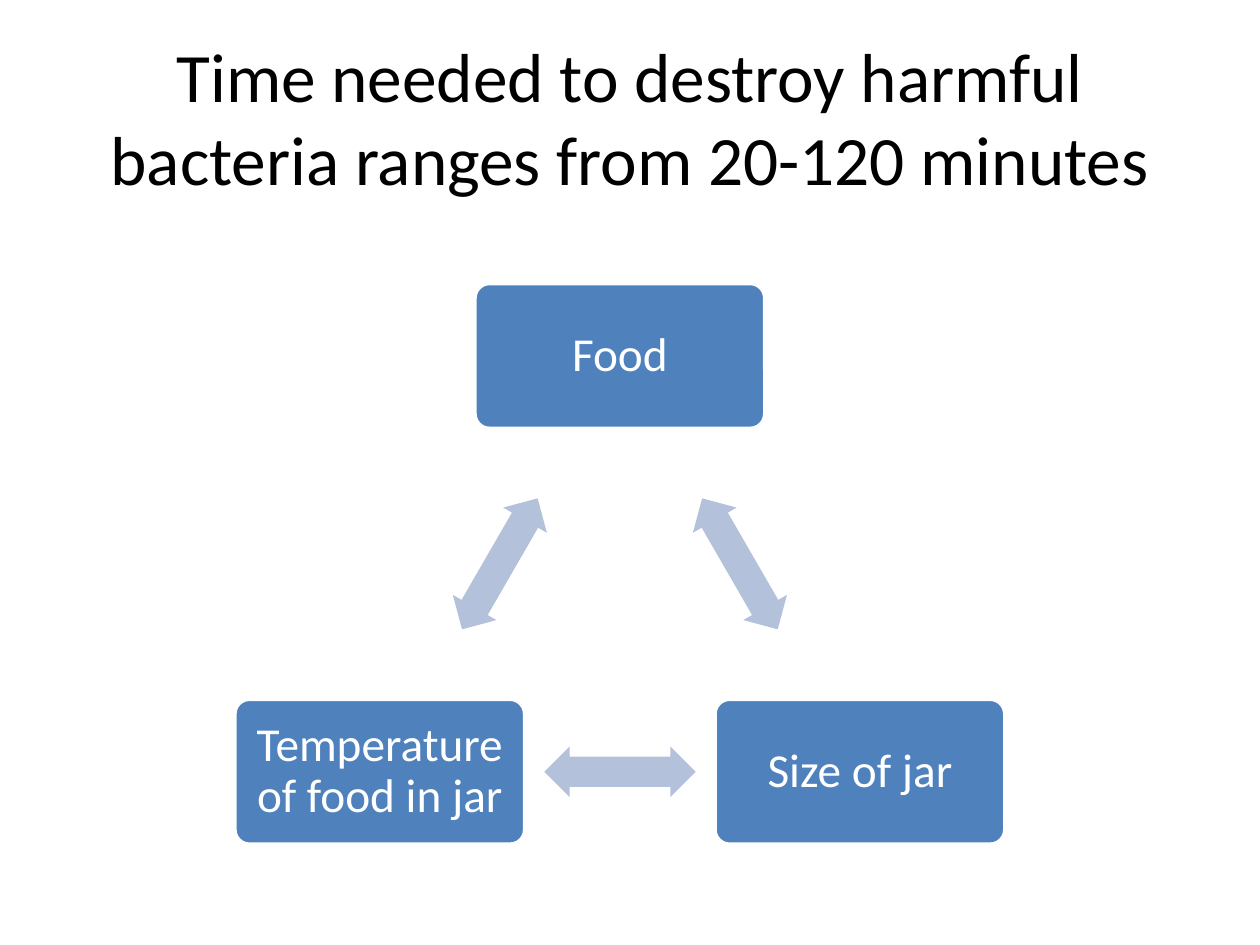
import math

from pptx import Presentation
from pptx import util as u
from pptx.dml.color import RGBColor
from pptx.enum import shapes, text

BLACK = RGBColor(0x00, 0x00, 0x00)
WHITE = RGBColor(0xFF, 0xFF, 0xFF)
BLUE = RGBColor(0x4F, 0x81, 0xBD)
PALE_BLUE = RGBColor(0xB3, 0xC1, 0xDB)
FACTORS = ["Food", "Size of jar", "Temperature of food in jar"]


def write_text(shape, words, size, color, inset=0.1, line_spacing=1.0):
    """Put centred, wrapped text in a shape with the given format."""
    frame = shape.text_frame
    frame.word_wrap = True
    frame.auto_size = text.MSO_AUTO_SIZE.NONE
    frame.vertical_anchor = text.MSO_ANCHOR.MIDDLE
    frame.margin_left = frame.margin_right = u.Inches(inset)
    frame.margin_top = frame.margin_bottom = u.Inches(inset)
    paragraph = frame.paragraphs[0]
    paragraph.alignment = text.PP_ALIGN.CENTER
    paragraph.line_spacing = line_spacing
    run = paragraph.add_run()
    run.text = words
    run.font.name = "Calibri"
    run.font.size = u.Pt(size)
    run.font.color.rgb = color


def add_centred_shape(slide, kind, center, size, fill, adjustments):
    """Add a filled preset shape around a centre point."""
    (x, y), (width, height) = center, size
    shape = slide.shapes.add_shape(
        kind, u.Inches(x - width / 2), u.Inches(y - height / 2),
        u.Inches(width), u.Inches(height))
    shape.shadow.inherit = False
    shape.fill.solid()
    shape.fill.fore_color.rgb = fill
    shape.line.fill.background()
    for index, value in enumerate(adjustments):
        shape.adjustments[index] = value
    return shape


def add_title(slide, left, top, width, height, words):
    """Place and format the title placeholder."""
    title = slide.shapes.title
    title.left, title.top = u.Inches(left), u.Inches(top)
    title.width, title.height = u.Inches(width), u.Inches(height)
    write_text(title, words, size=39.6, color=BLACK)


def add_cycle(slide, left, top, width, labels):
    """Draw labelled boxes on a ring with double arrows between neighbours."""
    box_size, arrow_size, radius = (2.3, 1.15), (1.2, 0.4), 2.2
    middle_x = left + width / 2
    middle_y = top + box_size[1] / 2 + radius
    step = 360 / len(labels)
    angles = [math.radians(index * step) for index in range(len(labels))]
    centers = [(middle_x + radius * math.sin(angle),
                middle_y - radius * math.cos(angle)) for angle in angles]
    for index, (label, center) in enumerate(zip(labels, centers)):
        box = add_centred_shape(slide, shapes.MSO_SHAPE.ROUNDED_RECTANGLE,
                                center, box_size, BLUE, [0.1])
        box.line.color.rgb = WHITE
        box.line.width = u.Pt(2)
        write_text(box, label, size=27, color=WHITE, inset=0.11, line_spacing=0.9)
        following = centers[(index + 1) % len(centers)]
        midpoint = [(a + b) / 2 for a, b in zip(center, following)]
        arrow = add_centred_shape(slide, shapes.MSO_SHAPE.LEFT_RIGHT_ARROW,
                                  midpoint, arrow_size, PALE_BLUE, [0.6, 0.5])
        arrow.rotation = (index + 0.5) * step


def main():
    """Build and save the slide."""
    presentation = Presentation()
    presentation.slide_width = u.Inches(10)
    presentation.slide_height = u.Inches(7.5)
    slide = presentation.slides.add_slide(presentation.slide_layouts[5])
    add_title(slide, 0.5, 0.3, 9, 1.25,
              "Time needed to destroy harmful bacteria ranges from 20-120 minutes")
    add_cycle(slide, 1.87, 2.25, 6.1, FACTORS)
    presentation.save("out.pptx")


if __name__ == "__main__":
    main()
